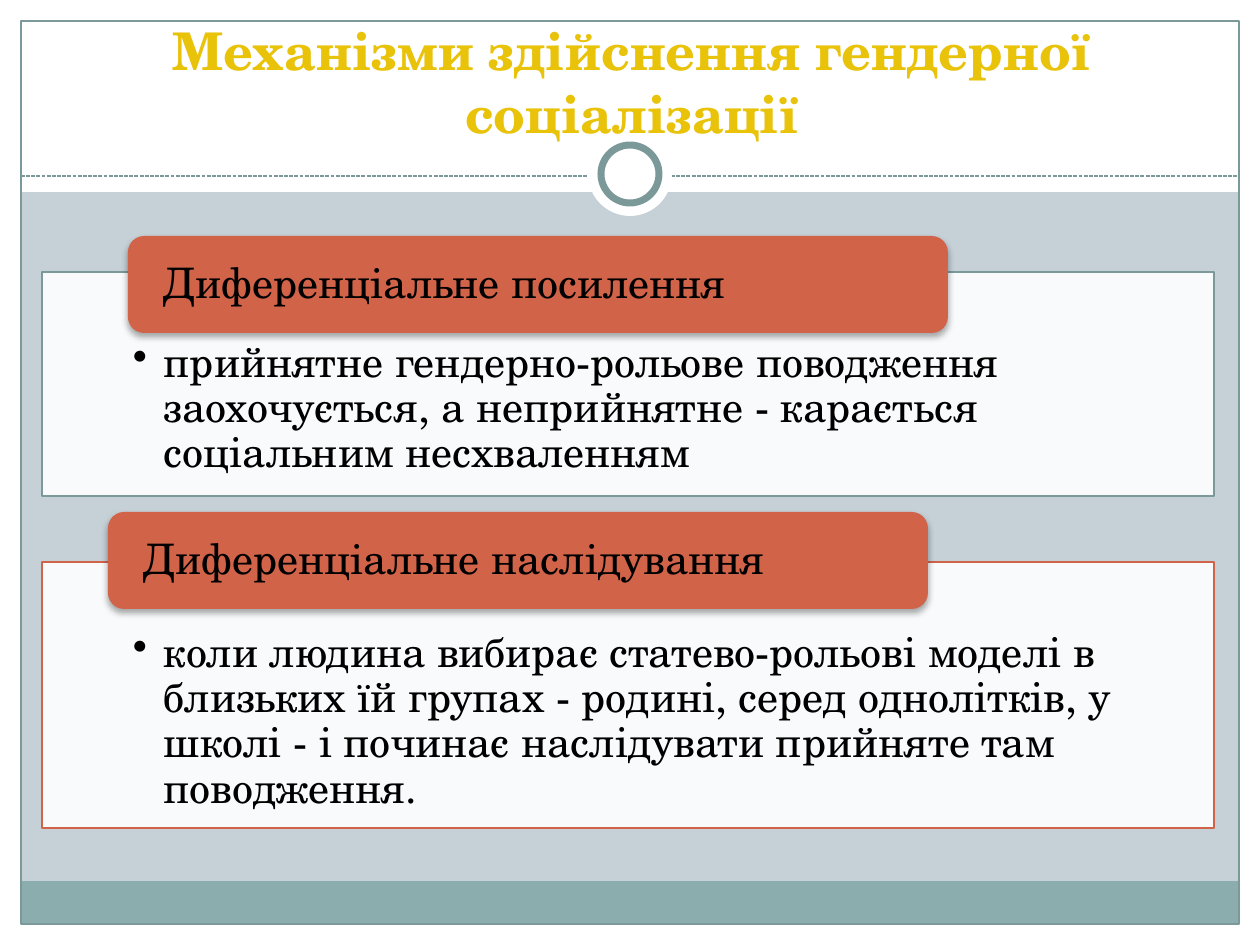
from lxml import etree
from pptx import Presentation
from pptx.dml.color import RGBColor
from pptx.enum import dml, shapes, text
from pptx.oxml import parse_xml
from pptx.oxml.ns import nsdecls, qn
from pptx.util import Emu, Pt

# Content
TITLE = "Механізми здійснення гендерної соціалізації"
# heading, heading left and top, body, panel top and height, panel border
MECHANISMS = [
    ("Диференціальне посилення", 128, 236,
     "прийнятне гендерно-рольове поводження заохочується, "
     "а неприйнятне - карається соціальним несхваленням",
     272, 224, RGBColor(0x7C, 0x99, 0x9A)),
    ("Диференціальне наслідування", 108, 512,
     "коли людина вибирає статево-рольові моделі в близьких їй групах - "
     "родині, серед однолітків, у школі - і починає наслідувати "
     "прийняте там поводження.",
     562, 266, RGBColor(0xD1, 0x63, 0x49)),
]

FONT = "TeX Gyre Schola"
BACKGROUND = RGBColor(0xC5, 0xD1, 0xD7)
WHITE = RGBColor(0xFF, 0xFF, 0xFF)
BLACK = RGBColor(0, 0, 0)
TEAL = RGBColor(0x7C, 0x99, 0x9A)
FOOTER = RGBColor(0x8C, 0xAD, 0xAE)
RED = RGBColor(0xD1, 0x63, 0x49)
GOLD = RGBColor(0xE9, 0xC2, 0x0A)

WIDTH, HEIGHT, EDGE = 1260, 945, 21
RECTANGLE = shapes.MSO_SHAPE.RECTANGLE
OVAL = shapes.MSO_SHAPE.OVAL


def px(length):
    return Emu(length * 914400 // 126)


presentation = Presentation()
presentation.slide_width, presentation.slide_height = px(WIDTH), px(HEIGHT)
slide = presentation.slides.add_slide(presentation.slide_layouts[5])
slide.background.fill.solid()
slide.background.fill.fore_color.rgb = BACKGROUND


def add_box(kind, box, fill=None, line=None, line_width=0.75):
    shape = slide.shapes.add_shape(kind, *map(px, box))
    shape.shadow.inherit = False
    if fill is None:
        shape.fill.background()
    else:
        shape.fill.solid()
        shape.fill.fore_color.rgb = fill
    if line is None:
        shape.line.fill.background()
    else:
        shape.line.color.rgb = line
        shape.line.width = Pt(line_width)
    return shape


def set_text(shape, words, insets, anchor):
    frame = shape.text_frame
    frame.word_wrap = True
    frame.vertical_anchor = anchor
    (frame.margin_left, frame.margin_top,
     frame.margin_right, frame.margin_bottom) = map(px, insets)
    paragraph = frame.paragraphs[0]
    paragraph.text = words
    paragraph.alignment = text.PP_ALIGN.LEFT
    paragraph.line_spacing = 0.9
    paragraph.font.name, paragraph.font.size = FONT, Pt(24)
    paragraph.font.color.rgb = BLACK
    return paragraph


def add_bullet(paragraph, indent):
    properties = paragraph._p.get_or_add_pPr()
    properties.set("marL", str(px(indent)))
    properties.set("indent", str(-px(indent)))
    etree.SubElement(properties, qn("a:buChar")).set("char", "•")


def add_soft_shadow(shape):
    effects = shape._element.spPr.find(qn("a:effectLst"))
    effects.append(parse_xml(
        f'<a:outerShdw {nsdecls("a")} blurRad="{Pt(4)}" dist="{Pt(2)}" '
        'dir="5400000" rotWithShape="0"><a:srgbClr val="000000">'
        '<a:alpha val="35000"/></a:srgbClr></a:outerShdw>'))


# White margins, header and footer band
for box in [(0, HEIGHT - EDGE, WIDTH, EDGE), (0, 0, WIDTH, 192),
            (0, 0, EDGE, HEIGHT), (WIDTH - EDGE, 0, EDGE, HEIGHT)]:
    add_box(RECTANGLE, box, WHITE)
add_box(RECTANGLE, (EDGE, 881, WIDTH - 2 * EDGE, 43), FOOTER)
add_box(RECTANGLE, (EDGE, EDGE, WIDTH - 2 * EDGE, HEIGHT - 2 * EDGE), line=TEAL)

# Dashed divider with a ring
divider = slide.shapes.add_connector(
    shapes.MSO_CONNECTOR.STRAIGHT, px(EDGE), px(176), px(WIDTH - EDGE), px(176))
divider.line.color.rgb = TEAL
divider.line.width = Pt(0.75)
divider.line.dash_style = dml.MSO_LINE.SQUARE_DOT
etree.SubElement(divider._element.spPr, qn("a:effectLst"))
add_box(OVAL, (588, 132, 84, 84), WHITE)
add_box(OVAL, (601, 145, 58, 58), WHITE, TEAL, 4)

# Title, brought in front of the header
title = slide.shapes.title
title.left, title.top, title.width, title.height = map(px, (44, 45, 1176, 105))
title.text_frame.text = TITLE
title.text_frame.word_wrap = True
title.text_frame.auto_size = text.MSO_AUTO_SIZE.NONE
title.text_frame.vertical_anchor = text.MSO_ANCHOR.BOTTOM
heading = title.text_frame.paragraphs[0]
heading.alignment = text.PP_ALIGN.CENTER
heading.font.name, heading.font.size, heading.font.bold = FONT, Pt(29.7), True
heading.font.color.rgb = GOLD
slide.shapes._spTree.append(title._element)

# Panels with overlapping headings
for name, left, top, body, panel_top, panel_height, border in MECHANISMS:
    panel = add_box(RECTANGLE, (42, panel_top, 1172, panel_height), WHITE, border)
    color = panel._element.spPr.find(qn("a:solidFill"))[0]
    etree.SubElement(color, qn("a:alpha")).set("val", "90000")
    add_bullet(set_text(panel, body, (91, 69, 91, 24), text.MSO_ANCHOR.TOP), 31)

    card = add_box(shapes.MSO_SHAPE.ROUNDED_RECTANGLE, (left, top, 820, 97), RED)
    add_soft_shadow(card)
    set_text(card, name, (31, 0, 31, 0), text.MSO_ANCHOR.MIDDLE)

presentation.save("out.pptx")
